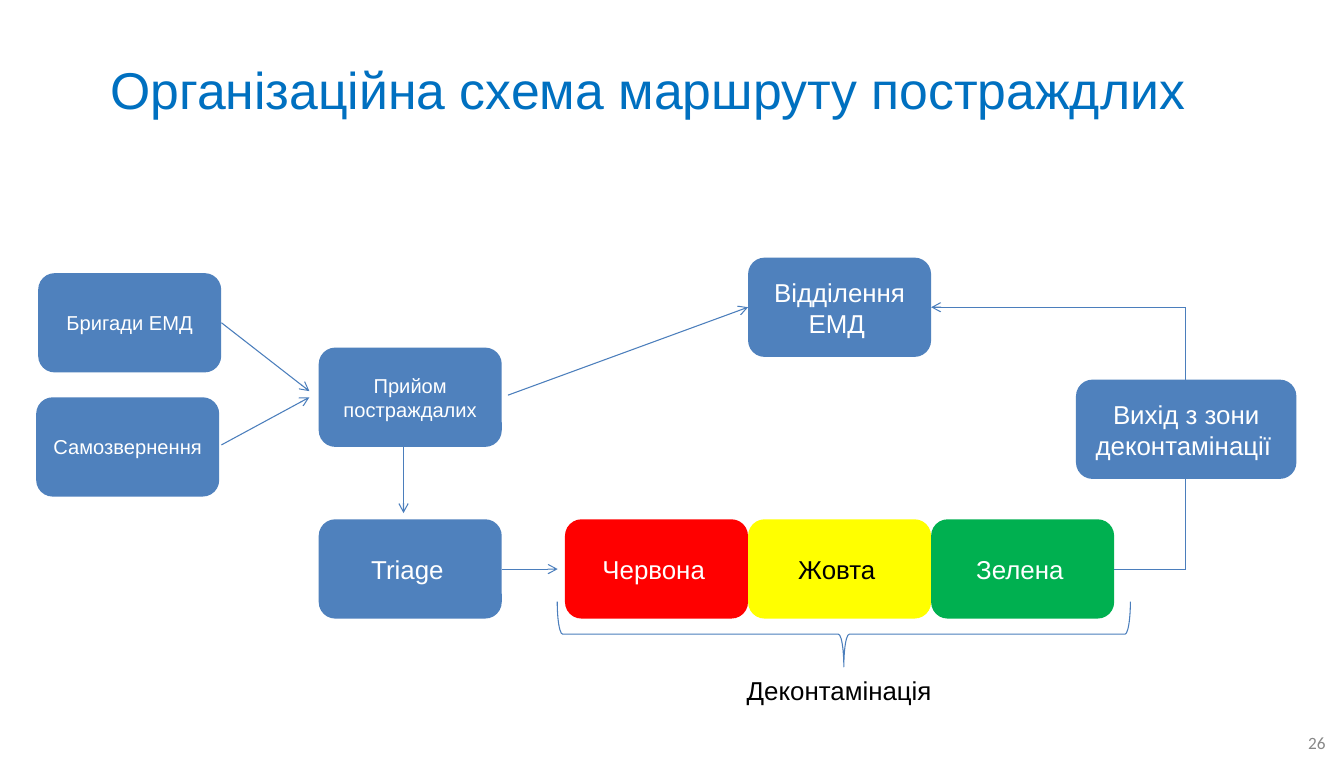
from lxml import etree
from pptx import Presentation
from pptx.dml.color import RGBColor
from pptx.enum.shapes import MSO_CONNECTOR, MSO_SHAPE
from pptx.enum.text import MSO_ANCHOR, PP_ALIGN
from pptx.oxml.ns import qn
from pptx.util import Pt

BLUE = RGBColor(0x4F, 0x81, 0xBD)
EDGE = RGBColor(0x4B, 0x7E, 0xBC)
TITLE = RGBColor(0x00, 0x70, 0xC0)
RED = RGBColor(0xFF, 0x00, 0x00)
YELLOW = RGBColor(0xFF, 0xFF, 0x00)
GREEN = RGBColor(0x00, 0xB0, 0x50)
WHITE = RGBColor(0xFF, 0xFF, 0xFF)
BLACK = RGBColor(0x00, 0x00, 0x00)
GRAY = RGBColor(0x88, 0x88, 0x88)

deck = Presentation()
deck.slide_width = Pt(935.28)
deck.slide_height = Pt(540)
slide = deck.slides.add_slide(deck.slide_layouts[6])
shapes = slide.shapes


def write(shape, text, size, color, align, face="Arial", wrap=True):
    frame = shape.text_frame
    frame.word_wrap = wrap
    frame.vertical_anchor = MSO_ANCHOR.MIDDLE
    para = frame.paragraphs[0]
    para.alignment = align
    parts = [(text, size)]
    if size == 18:
        parts.append((" ", 14))
    for words, points in parts:
        run = para.add_run()
        run.text = words
        run.font.size = Pt(points)
        run.font.name = face
        run.font.color.rgb = color


labels = [
    ("26", 887, 502.5, 42.5, 28, 12, GRAY, PP_ALIGN.RIGHT, "Calibri", True),
    ("Організаційна схема маршруту постраждлих",
     69.8, 28, 820, 67, 36, TITLE, PP_ALIGN.JUSTIFY, "Arial", True),
    ("Деконтамінація", 512.6, 465.8, 148.3, 28.8, 18, BLACK,
     PP_ALIGN.LEFT, "Arial", False),
]
for text, left, top, width, height, size, color, align, face, wrap in labels:
    box = shapes.add_textbox(Pt(left), Pt(top), Pt(width), Pt(height))
    write(box, text, size, color, align, face, wrap)

HIGH = 213.8
LOW = 396
TURN = 825.1
lines = [
    (154.1, 224.6, 215.3, 272.2, True),
    (154.1, 309.6, 215.3, 276.5, True),
    (353.5, 275, 520.6, HIGH, True),
    (280.8, 310, 280.8, 357.1, True),
    (349.2, LOW, 388.1, LOW, True),
    (775.4, LOW, TURN, LOW, False),
    (TURN, LOW, TURN, HIGH, False),
    (TURN, HIGH, 648, HIGH, True),
]
for x1, y1, x2, y2, arrow in lines:
    line = shapes.add_connector(
        MSO_CONNECTOR.STRAIGHT, Pt(x1), Pt(y1), Pt(x2), Pt(y2))
    line.line.color.rgb = EDGE
    line.line.width = Pt(0.75)
    if arrow:
        etree.SubElement(line.line._get_or_add_ln(), qn("a:tailEnd"), type="arrow")
    etree.SubElement(line._element.spPr, qn("a:effectLst"))

WIDE = 127.4
ROW = 361.4
ZONE = 393.2
boxes = [
    ("Прийом постраждалих", 221.8, 241.9, WIDE, 14, BLUE, WHITE),
    ("Бригади ЕМД", 26.6, 190.1, WIDE, 14, BLUE, WHITE),
    ("Самозвернення", 25.2, 276.5, WIDE, 14, BLUE, WHITE),
    ("Triage", 221.8, ROW, WIDE, 18, BLUE, WHITE),
    ("Відділення ЕМД", 520.6, 179.3, WIDE, 18, BLUE, WHITE),
    ("Вихід з зони деконтамінації", 748.8, 264.2, 153.4, 18, BLUE, WHITE),
]
zones = [("Червона", RED, WHITE), ("Жовта", YELLOW, BLACK), ("Зелена", GREEN, WHITE)]
for i, (text, fill, ink) in enumerate(zones):
    boxes.append((text, ZONE + i * WIDE, ROW, WIDE, 18, fill, ink))

for text, left, top, width, size, fill, ink in boxes:
    box = shapes.add_shape(
        MSO_SHAPE.ROUNDED_RECTANGLE, Pt(left), Pt(top), Pt(width), Pt(69.1))
    box.shadow.inherit = False
    box.fill.solid()
    box.fill.fore_color.rgb = fill
    box.line.fill.background()
    write(box, text, size, ink, PP_ALIGN.CENTER)

brace = shapes.add_shape(
    MSO_SHAPE.RIGHT_BRACE, Pt(564.5), Pt(241.9), Pt(45.4), Pt(398.9))
brace.rotation = 90
brace.shadow.inherit = False
brace.fill.background()
brace.line.color.rgb = EDGE
brace.line.width = Pt(0.75)

deck.save("out.pptx")
